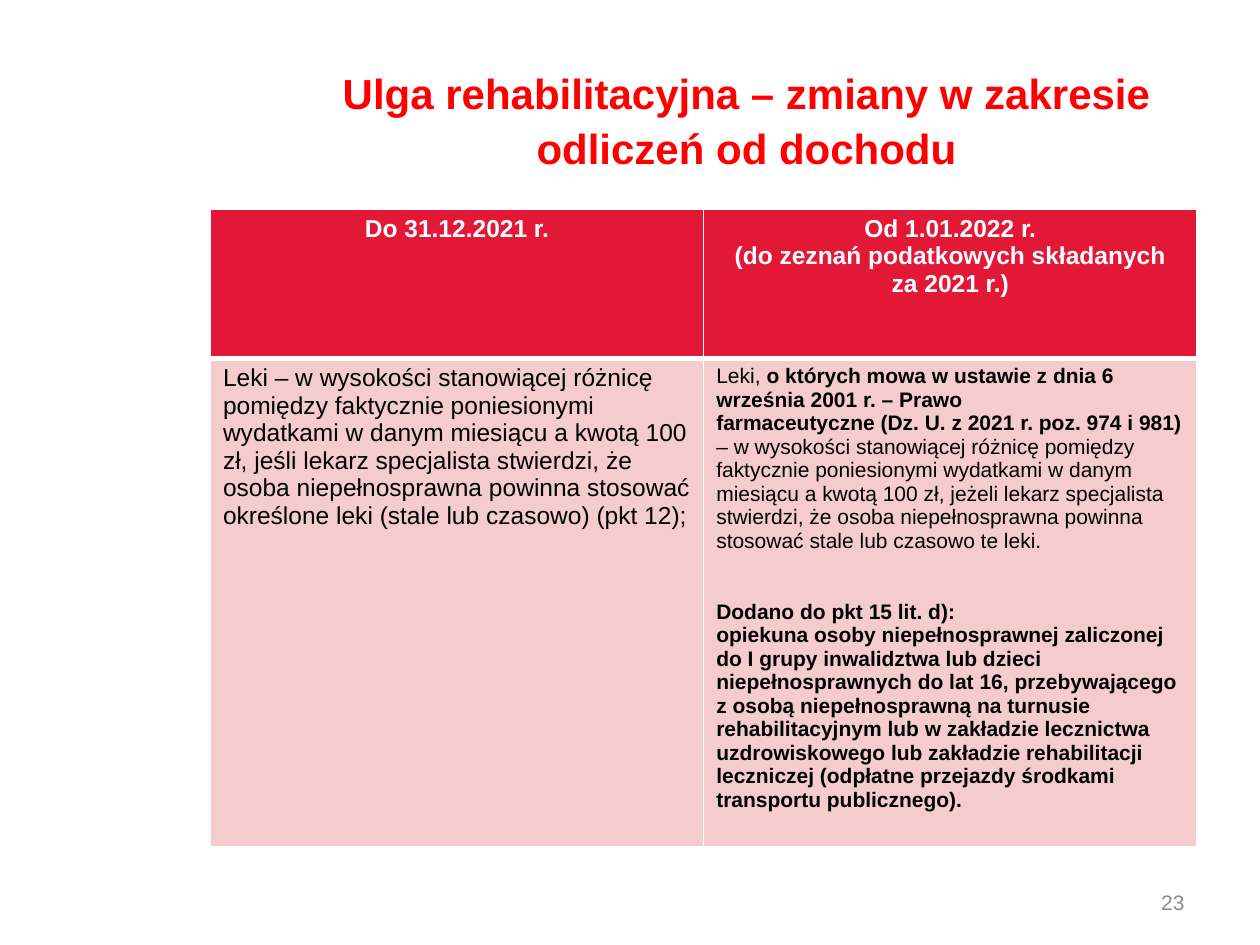
from lxml import etree
from pptx import Presentation
from pptx.dml.color import RGBColor
from pptx.enum.text import MSO_ANCHOR as Anchor, PP_ALIGN as Align
from pptx.oxml.ns import qn
from pptx.util import Inches, Pt

WIDTH, HEIGHT = 10, 7.5
FONT = "Arial"
RED, CRIMSON, PINK = "FF0000", "E31837", "F4CCCE"
WHITE, BLACK, GRAY = "FFFFFF", "000000", "8C8C8C"


def color(value):
    return RGBColor.from_string(value)


class SlideBuilder:
    """Holds the slide and its text style; lengths are shares of the slide."""

    def __init__(self, presentation):
        self.slide = presentation.slides.add_slide(presentation.slide_layouts[6])

    def box(self, left, top, width, height):
        return (Inches(left * WIDTH), Inches(top * HEIGHT),
                Inches(width * WIDTH), Inches(height * HEIGHT))

    def fill_text(self, frame, paragraphs, size, ink, align=Align.LEFT, gaps=None):
        """Each paragraph is a list of (text, bold) runs; gaps maps index to space before."""
        frame.word_wrap = True
        for index, runs in enumerate(paragraphs):
            paragraph = frame.add_paragraph() if index else frame.paragraphs[0]
            paragraph.alignment = align
            if gaps and index in gaps:
                paragraph.space_before = Pt(gaps[index])
            for text, bold in runs:
                run = paragraph.add_run()
                run.text = text
                run.font.name = FONT
                run.font.size = Pt(size)
                run.font.bold = bold
                run.font.color.rgb = color(ink)

    def text(self, place, runs, size, ink, align, spacing=None):
        frame = self.slide.shapes.add_textbox(*self.box(*place)).text_frame
        frame.vertical_anchor = Anchor.MIDDLE
        self.fill_text(frame, [runs], size, ink, align)
        frame.paragraphs[0].line_spacing = spacing

    def table(self, place, row_shares, columns):
        left, top, width, height = self.box(*place)
        table = self.slide.shapes.add_table(
            len(row_shares), columns, left, top, width, height).table
        for row, share in zip(table.rows, row_shares):
            row.height = int(height * share)
        return table

    def cell(self, cell, fill, paragraphs, size, ink, bottom=1, **style):
        cell.fill.solid()
        cell.fill.fore_color.rgb = color(fill)
        self.fill_text(cell.text_frame, paragraphs, size, ink, **style)
        # Borders come before the fill in the cell properties
        properties = cell._tc.get_or_add_tcPr()
        sides = {"a:lnL": 1, "a:lnR": 1, "a:lnT": 1, "a:lnB": bottom}
        for position, (side, points) in enumerate(sides.items()):
            line = etree.Element(qn(side), w=str(Pt(points)))
            solid = etree.SubElement(line, qn("a:solidFill"))
            etree.SubElement(solid, qn("a:srgbClr"), val=WHITE)
            properties.insert(position, line)


def main():
    presentation = Presentation()
    presentation.slide_width = Inches(WIDTH)
    presentation.slide_height = Inches(HEIGHT)
    builder = SlideBuilder(presentation)

    # Page number and title
    builder.text((0.72, 0.93, 0.23, 0.05), [("23", False)], 12, GRAY, Align.RIGHT)
    title = "Ulga rehabilitacyjna – zmiany w zakresie odliczeń od dochodu"
    builder.text((0.253, 0.041, 0.679, 0.167), [(title, True)],
                 24, RED, Align.CENTER, spacing=1.09)

    # Comparison of the rules before and after the change
    table = builder.table((0.167, 0.221, 0.783, 0.673), (0.235, 0.765), 2)
    headers = [
        ["Do 31.12.2021 r."],
        ["Od 1.01.2022 r.", "(do zeznań podatkowych składanych", "za 2021 r.)"],
    ]
    for column, lines in enumerate(headers):
        builder.cell(table.cell(0, column), CRIMSON, [[(line, True)] for line in lines],
                     14, WHITE, bottom=3, align=Align.CENTER)

    old_rules = [[(
        "Leki – w wysokości stanowiącej różnicę pomiędzy faktycznie poniesionymi "
        "wydatkami w danym miesiącu a kwotą 100 zł, jeśli lekarz specjalista stwierdzi, "
        "że osoba niepełnosprawna powinna stosować określone leki (stale lub czasowo) "
        "(pkt 12);", False)]]
    builder.cell(table.cell(1, 0), PINK, old_rules, 14, BLACK)

    new_rules = [
        [("Leki, ", False),
         ("o których mowa w ustawie z dnia 6 września 2001 r. – Prawo", True)],
        [("farmaceutyczne (Dz. U. z 2021 r. poz. 974 i 981)", True),
         (" – w wysokości stanowiącej różnicę pomiędzy faktycznie poniesionymi "
          "wydatkami w danym miesiącu a kwotą 100 zł, jeżeli lekarz specjalista "
          "stwierdzi, że osoba niepełnosprawna powinna stosować stale lub czasowo "
          "te leki.", False)],
        [("Dodano do pkt 15 lit. d):", True)],
        [("opiekuna osoby niepełnosprawnej zaliczonej do I grupy inwalidztwa lub dzieci "
          "niepełnosprawnych do lat 16, przebywającego z osobą niepełnosprawną na "
          "turnusie rehabilitacyjnym lub w zakładzie lecznictwa uzdrowiskowego lub "
          "zakładzie rehabilitacji leczniczej (odpłatne przejazdy środkami transportu "
          "publicznego).", True)],
    ]
    builder.cell(table.cell(1, 1), PINK, new_rules, 12, BLACK, gaps={2: 27})

    presentation.save("out.pptx")


if __name__ == "__main__":
    main()
